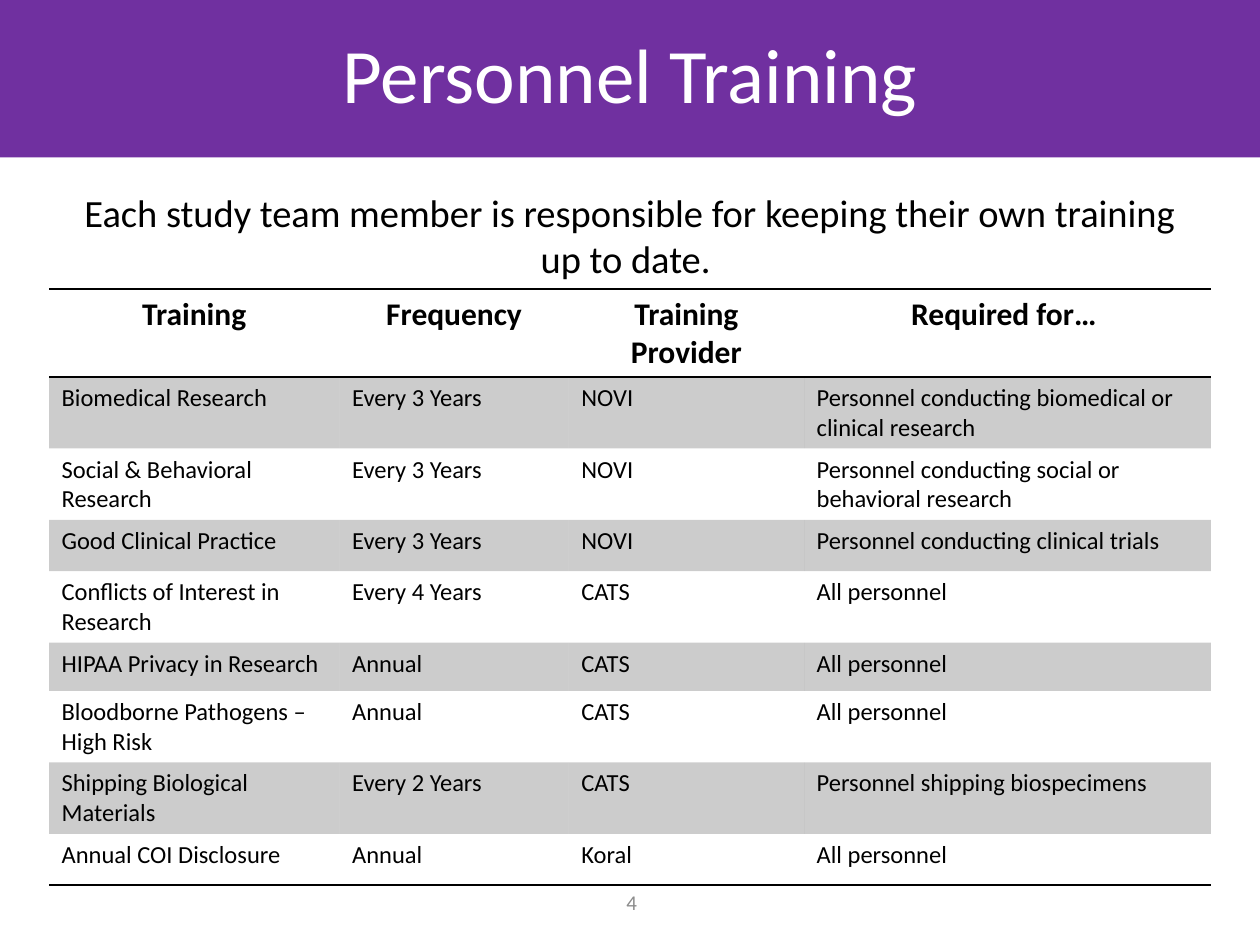
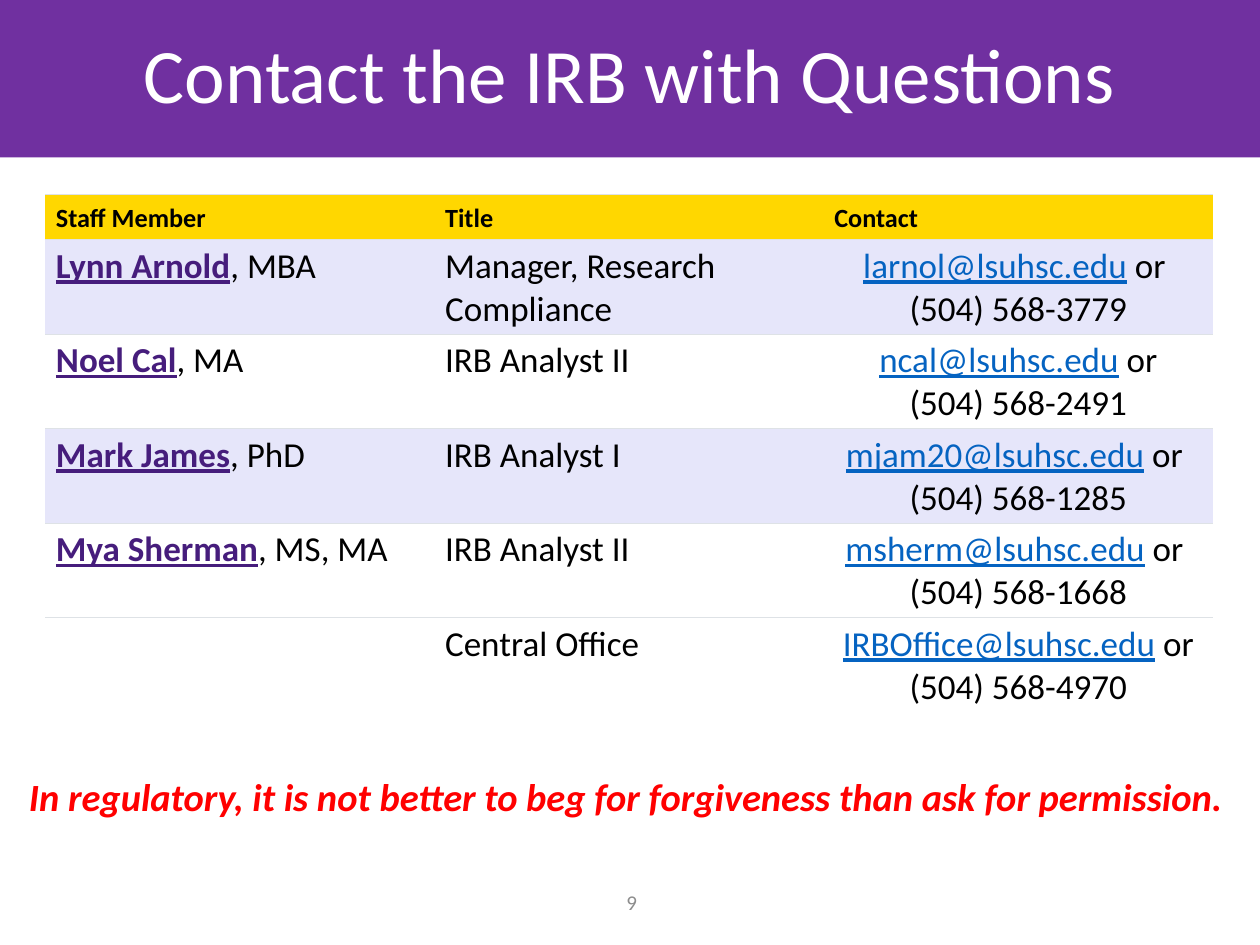
from lxml import etree
from pptx import Presentation
from pptx.dml.color import RGBColor
from pptx.enum.text import MSO_ANCHOR, MSO_AUTO_SIZE, PP_ALIGN
from pptx.oxml.ns import qn
from pptx.util import Pt

LEFT, MID = PP_ALIGN.LEFT, PP_ALIGN.CENTER
TOP, CENTRE, LOW = MSO_ANCHOR.TOP, MSO_ANCHOR.MIDDLE, MSO_ANCHOR.BOTTOM
GROW = MSO_AUTO_SIZE.SHAPE_TO_FIT_TEXT
PLAIN = "{2D5ABB26-0587-4C30-8999-92F81FD0307C}"
FONT = "Calibri"
WIDE, HIGH = 720, 540
COLORS = {
    "band": "7030A0", "white": "FFFFFF", "black": "000000", "grey": "8C8C8C",
    "gold": "FFD700", "lilac": "E6E6FA", "rule": "DEE2E6",
    "name": "461D7C", "mail": "0563C1", "alert": "FF0000",
}
LOOKS = {
    "name": {"color": "name", "bold": True, "line": True},
    "mail": {"color": "mail", "line": True},
}

COURSES = [
    ("Biomedical Research", "Every 3 Years", "NOVI",
     "Personnel conducting biomedical or clinical research"),
    ("Social & Behavioral Research", "Every 3 Years", "NOVI",
     "Personnel conducting social or behavioral research"),
    ("Good Clinical Practice", "Every 3 Years", "NOVI",
     "Personnel conducting clinical trials"),
    ("Conflicts of Interest in Research", "Every 4 Years", "CATS", "All personnel"),
    ("HIPAA Privacy in Research", "Annual", "CATS", "All personnel"),
    ("Bloodborne Pathogens – High Risk", "Annual", "CATS", "All personnel"),
    ("Shipping Biological Materials", "Every 2 Years", "CATS",
     "Personnel shipping biospecimens"),
    ("Annual COI Disclosure", "Annual", "Koral", "All personnel"),
]
STAFF = [
    ("Lynn Arnold", ", MBA", "Manager, Research Compliance", "larnol", " or ", "3779"),
    ("Noel Cal", ", MA", "IRB Analyst II", "ncal", " or", "2491"),
    ("Mark James", ", PhD", "IRB Analyst I", "mjam20", " or ", "1285"),
    ("Mya Sherman", ", MS, MA", "IRB Analyst II", "msherm", " or ", "1668"),
]


def tint(key):
    return RGBColor.from_string(COLORS[key])


def write(frame, text, size=14, color="black", bold=False, slant=False,
          align=LEFT, after=None, pitch=None):
    """Fill a frame from a string or a list of paragraphs, each a list of (text, look)."""
    paras = [[(text, None)]] if isinstance(text, str) else text
    for i, runs in enumerate(paras):
        para = frame.add_paragraph() if i else frame.paragraphs[0]
        para.alignment = align
        if after is not None:
            para.space_after = Pt(after)
        if pitch is not None:
            para.line_spacing = pitch
        for words, look in runs:
            style = {"color": color, "bold": bold, "line": False, **LOOKS.get(look, {})}
            run = para.add_run()
            run.text = words
            font = run.font
            font.name, font.size = FONT, Pt(size)
            font.bold, font.italic = style["bold"], slant
            font.underline = style["line"]
            font.color.rgb = tint(style["color"])


class Deck:
    def __init__(self):
        self.prs = Presentation()
        self.prs.slide_width, self.prs.slide_height = Pt(WIDE), Pt(HIGH)
        self.slide = None

    def page(self, title, number):
        """Start a slide with its title band and page number."""
        self.slide = self.prs.slides.add_slide(self.prs.slide_layouts[5])
        band = self.slide.shapes.title
        band.left, band.top, band.width, band.height = Pt(0), Pt(0), Pt(WIDE), Pt(90)
        band.fill.solid()
        band.fill.fore_color.rgb = tint("band")
        band.text_frame.vertical_anchor = CENTRE
        write(band.text_frame, title, size=44, color="white", align=MID, pitch=0.9)
        self.text(number, 337, 501, 48, 29, anchor=CENTRE, grow=False,
                  size=12, color="grey", align=MID)

    def text(self, words, x, y, w, h, anchor=TOP, grow=True, **form):
        box = self.slide.shapes.add_textbox(Pt(x), Pt(y), Pt(w), Pt(h))
        frame = box.text_frame
        frame.word_wrap = True
        frame.vertical_anchor = anchor
        if grow:
            frame.auto_size = GROW
        write(frame, words, **form)

    def table(self, x, y, cols, rows):
        """Add an unstyled table; return its grid."""
        frame = self.slide.shapes.add_table(
            len(rows), len(cols), Pt(x), Pt(y), Pt(sum(cols)), Pt(sum(rows)))
        grid = frame.table
        props = grid._tbl.tblPr
        props.find(qn("a:tableStyleId")).text = PLAIN
        grid.first_row = grid.horz_banding = False
        for col, width in zip(grid.columns, cols):
            col.width = Pt(width)
        for row, height in zip(grid.rows, rows):
            row.height = Pt(height)
        return grid

    def cell(self, cell, words, fill=None, alpha=None, edges="", rule="black",
             weight=1, inset=None, anchor=TOP, **form):
        """Write one cell; edges names its ruled sides, as in "TB"."""
        cell.vertical_anchor = anchor
        if inset:
            cell.margin_left = cell.margin_right = Pt(inset[0])
            cell.margin_top = cell.margin_bottom = Pt(inset[1])
        if words:
            write(cell.text_frame, words, **form)
        props = cell._tc.get_or_add_tcPr()
        for side in edges:
            line = etree.SubElement(props, qn(f"a:ln{side}"), w=str(Pt(weight)))
            paint = etree.SubElement(line, qn("a:solidFill"))
            etree.SubElement(paint, qn("a:srgbClr"), val=COLORS[rule])
        if not fill:
            cell.fill.background()
            return
        cell.fill.solid()
        cell.fill.fore_color.rgb = tint(fill)
        if alpha:
            color = props.find(qn("a:solidFill")).find(qn("a:srgbClr"))
            etree.SubElement(color, qn("a:alpha"), val=str(alpha * 1000))


def courses(deck):
    deck.page("Personnel Training", "4")
    deck.text("Each study team member is responsible for keeping their own "
              "training up to date. ", 28, 104.5, 664, 60.5, size=22, align=MID)
    heads = ("Training", "Frequency", "Training Provider", "Required for… ")
    rows = [29.2] * (len(COURSES) + 1)
    rows[5] = 27.6
    grid = deck.table(28, 165, (166, 131, 134.5, 232.5), rows)
    for c, head in enumerate(heads):
        deck.cell(grid.cell(0, c), head, edges="TB", size=18, bold=True, align=MID)
    for r, row in enumerate(COURSES, 1):
        for c, words in enumerate(row):
            deck.cell(grid.cell(r, c), words, fill="black" if r % 2 else None,
                      alpha=20, edges="B" if r == len(COURSES) else "")


def contacts(deck):
    deck.page("Contact the IRB with Questions", "9")
    rows = [
        ([[(name, "name"), (grade, None)]], job,
         [[(f"{user}@lsuhsc.edu", "mail"), (link, None)], [(f"(504) 568-{ext}", None)]])
        for name, grade, job, user, link, ext in STAFF
    ]
    rows.append(("", "Central Office",
                 [[("IRBOffice@lsuhsc.edu", "mail"), (" or (504) 568-4970", None)]]))
    grid = deck.table(26, 111, [222.4] * 3, [26] + [54] * len(rows))
    form = {"rule": "rule", "weight": 0.6, "inset": (6, 3)}
    for c, head in enumerate(("Staff Member", "Title", "Contact")):
        deck.cell(grid.cell(0, c), head, fill="gold", edges="TB", anchor=LOW,
                  size=15, bold=True, **form)
    for r, row in enumerate(rows, 1):
        last = r == len(rows)
        fill = "lilac" if r % 2 and not last else "white"
        for c, words in enumerate(row):
            deck.cell(grid.cell(r, c), words, fill=fill, edges="T" if last else "TB",
                      size=20, align=MID if c == 2 else LEFT, **form)
    deck.text("In regulatory, it is not better to beg for forgiveness than ask "
              "for permission.", 9.5, 438, 700, 34, size=22, color="alert",
              bold=True, slant=True, after=12)


def main():
    deck = Deck()
    courses(deck)
    contacts(deck)
    deck.prs.save("out.pptx")


if __name__ == "__main__":
    main()
